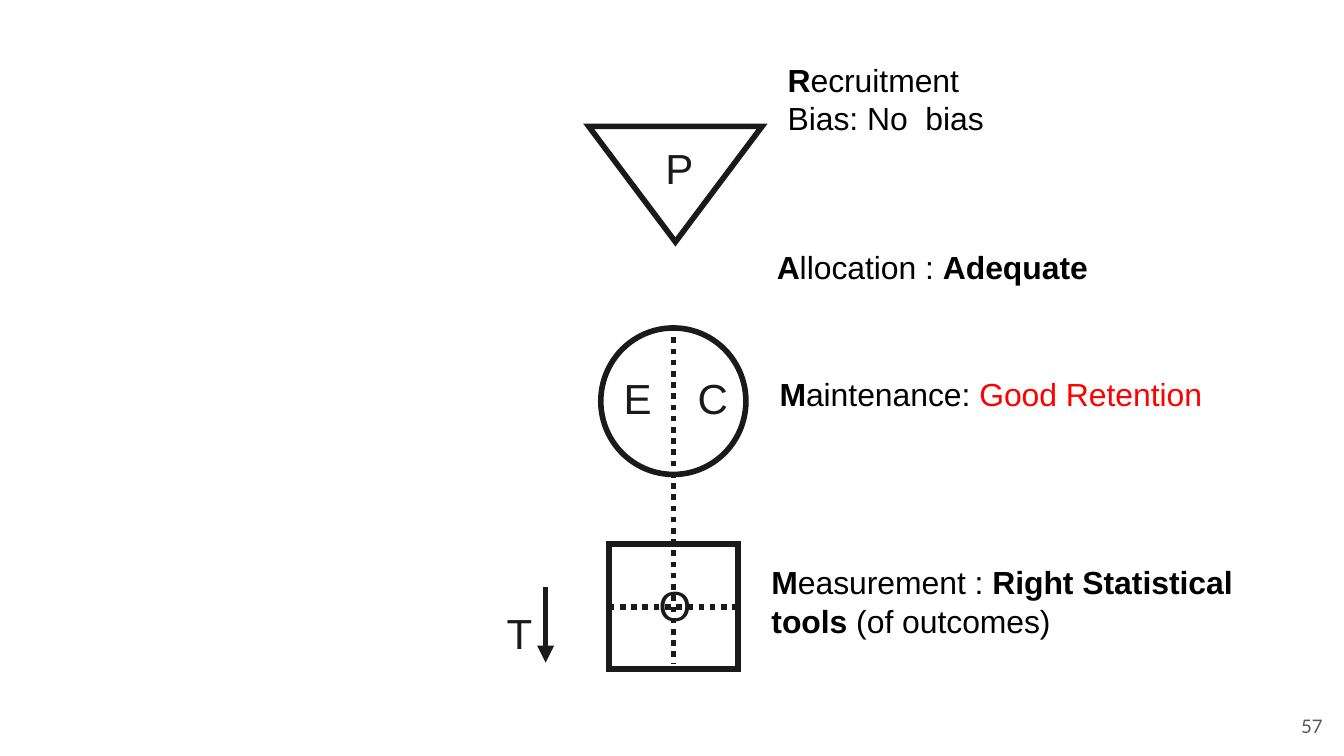
"""Build a slide with a trial appraisal diagram: population, groups, outcomes and time."""
from lxml.etree import SubElement
from pptx import Presentation
from pptx.dml.color import RGBColor
from pptx.enum.dml import MSO_LINE
from pptx.enum.shapes import MSO_CONNECTOR, MSO_SHAPE
from pptx.enum.text import MSO_ANCHOR as Anchor, MSO_AUTO_SIZE as AutoSize, PP_ALIGN as Align
from pptx.oxml.ns import qn
from pptx.util import Inches, Pt

INK, BLACK, RED, GREY = "1A1A1A", "000000", "FF0000", "595959"

deck = Presentation()
deck.slide_width, deck.slide_height = Inches(10), Inches(10) * 9 // 16
page = deck.slides.add_slide(deck.slide_layouts[6])


def paint(color_format, color):
    color_format.rgb = RGBColor.from_string(color)


def add_text(paragraphs, left, top, width, height, size=17.1, font="Arial", color=BLACK,
             align=Align.LEFT, anchor=Anchor.TOP, wrap=True, margins=(0.07, 0.04),
             fit=AutoSize.SHAPE_TO_FIT_TEXT, tab=None):
    box = page.shapes.add_textbox(Inches(left), Inches(top), Inches(width), Inches(height))
    frame = box.text_frame
    frame.word_wrap, frame.vertical_anchor, frame.auto_size = wrap, anchor, fit
    frame.margin_left = frame.margin_right = Inches(margins[0])
    frame.margin_top = frame.margin_bottom = Inches(margins[1])
    for index, spans in enumerate(paragraphs):
        para = frame.add_paragraph() if index else frame.paragraphs[0]
        para.alignment = align
        if tab:
            stops = SubElement(para._p.get_or_add_pPr(), qn("a:tabLst"))
            SubElement(stops, qn("a:tab"), pos=str(Inches(tab)), algn="l")
        for text, bold, span_color in spans:
            span = para.add_run()
            span.text = text
            span.font.name, span.font.size, span.font.bold = font, Pt(size), bold
            paint(span.font.color, span_color or color)


outlines = {}
for name, kind, left, top, width, height, rotation in [
    ("groups", MSO_SHAPE.OVAL, 4.47, 2.44, 1.08, 1.09, 0),
    ("outcomes", MSO_SHAPE.RECTANGLE, 4.53, 4.05, 0.96, 0.93, 0),
    ("population", MSO_SHAPE.ISOSCELES_TRIANGLE, 4.38, 0.94, 1.29, 0.86, 180),
]:
    shape = page.shapes.add_shape(kind, Inches(left), Inches(top), Inches(width), Inches(height))
    shape.rotation = rotation
    shape.shadow.inherit = False
    shape.fill.background()
    shape.line.width = Pt(3)
    paint(shape.line.color, INK)
    SubElement(shape.line._get_or_add_ln(), qn("a:miter"), lim="800000")
    outlines[name] = shape

lines = {}
for name, x1, y1, x2, y2, dash in [
    ("group divider", 5.01, 2.51, 5.01, 4.94, MSO_LINE.ROUND_DOT),
    ("outcome divider", 4.53, 4.51, 5.49, 4.51, MSO_LINE.ROUND_DOT),
    ("time arrow", 4.06, 4.37, 4.06, 4.93, None),
]:
    line = page.shapes.add_connector(
        MSO_CONNECTOR.STRAIGHT, Inches(x1), Inches(y1), Inches(x2), Inches(y2))
    line.line.width, line.line.dash_style = Pt(3), dash
    paint(line.line.color, INK)
    SubElement(line._element.spPr, qn("a:effectLst"))
    lines[name] = line

lines["outcome divider"].begin_connect(outlines["outcomes"], 1)
lines["outcome divider"].end_connect(outlines["outcomes"], 3)
SubElement(lines["time arrow"].line._get_or_add_ln(), qn("a:tailEnd"), type="triangle")

for letters, left, top, width, tab in [
    ("P", 4.88, 1.02, 0.35, None),
    ("E\tC", 4.57, 2.73, 0.93, 0.55),
    ("O", 4.83, 4.27, 0.39, None),
    ("T", 3.7, 4.48, 0.33, None),
]:
    add_text([[(letters, False, None)]], left, top, width, 0.45, size=22.5, color=INK,
             wrap=False, tab=tab)

for paragraphs, left, top, width, height in [
    ([[("A", True, None), ("llocation : ", False, None),
       ("Adequate", True, None)]], 5.71, 1.8, 2.73, 0.65),
    ([[("M", True, None), ("aintenance: ", False, None),
       ("Good Retention", False, RED)]], 5.73, 2.75, 3.32, 0.93),
    ([[("M", True, None), ("easurement : ", False, None), ("Right Statistical tools ", True, None),
       ("(of outcomes)", False, None)]], 5.67, 4.15, 3.76, 0.65),
    ([[("R", True, None), ("ecruitment", False, None)],
      [("Bias: No  bias", False, None)]], 5.79, 0.41, 2.59, 0.65),
]:
    add_text(paragraphs, left, top, width, height)

add_text([[("57", False, None)]], 9.34, 5.19, 0.6, 0.43, size=10, font="Lato", color=GREY,
         align=Align.RIGHT, anchor=Anchor.MIDDLE, margins=(0.1, 0.1), fit=AutoSize.NONE)

deck.save("out.pptx")
